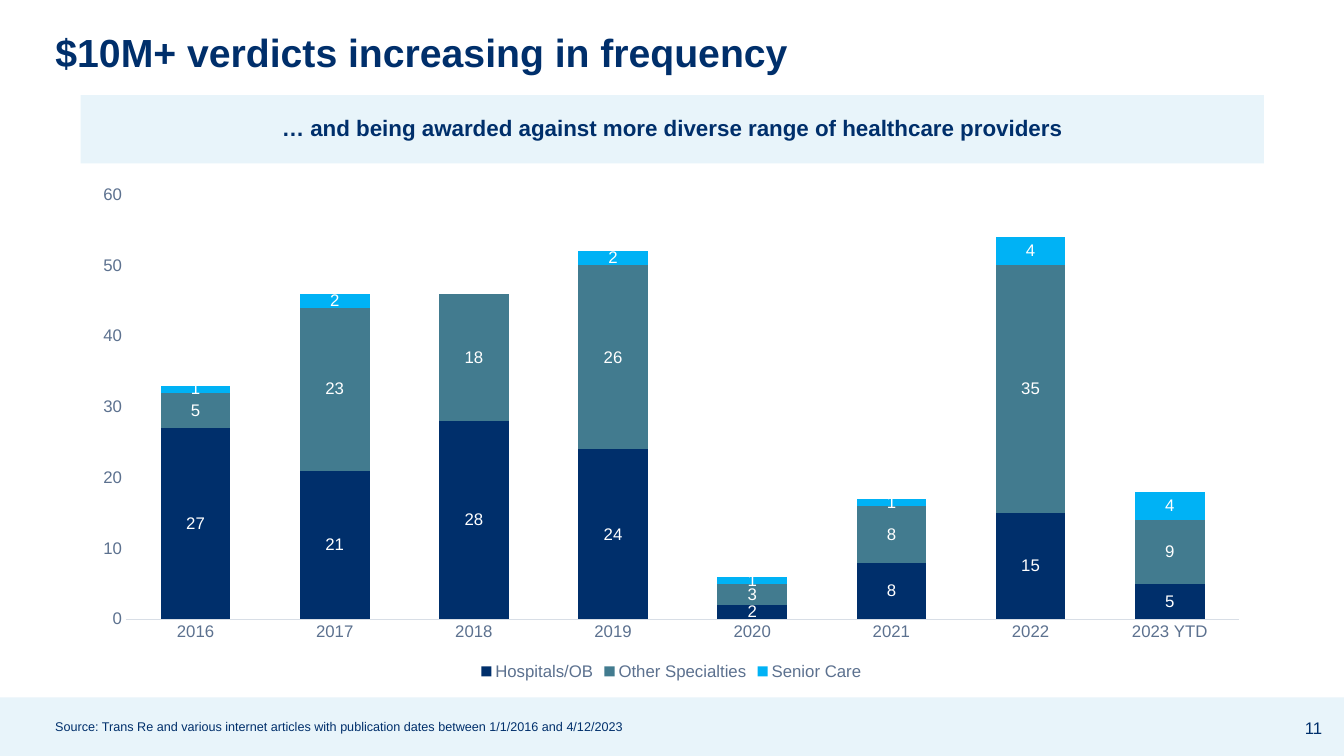
from pptx import Presentation
from pptx.chart.data import CategoryChartData
from pptx.dml.color import RGBColor
from pptx.enum.chart import XL_CHART_TYPE, XL_LABEL_POSITION, XL_LEGEND_POSITION, XL_TICK_MARK
from pptx.enum.shapes import MSO_SHAPE
from pptx.enum.text import MSO_ANCHOR, MSO_AUTO_SIZE, PP_ALIGN
from pptx.util import Pt

RECTANGLE = MSO_SHAPE.RECTANGLE
STACKED = XL_CHART_TYPE.COLUMN_STACKED
CENTER_LABEL = XL_LABEL_POSITION.CENTER
LEGEND_BOTTOM = XL_LEGEND_POSITION.BOTTOM
NO_TICK = XL_TICK_MARK.NONE
MIDDLE = MSO_ANCHOR.MIDDLE
NO_FIT = MSO_AUTO_SIZE.NONE
LEFT, CENTER = PP_ALIGN.LEFT, PP_ALIGN.CENTER

COLORS = {
    "navy": "002F6B",
    "teal": "427B8F",
    "sky": "00B2F5",
    "pale": "E8F4FA",
    "slate": "5C718F",
    "axis": "D8DEE6",
    "white": "FFFFFF",
}
YEARS = ["2016", "2017", "2018", "2019", "2020", "2021", "2022", "2023 YTD"]
VERDICTS = [
    ("Hospitals/OB", "navy", [27, 21, 28, 24, 2, 8, 15, 5]),
    ("Other Specialties", "teal", [5, 23, 18, 26, 3, 8, 35, 9]),
    ("Senior Care", "sky", [1, 2, None, 2, 1, 1, 4, 4]),
]


def color(name):
    return RGBColor.from_string(COLORS[name])


def style_font(font, size, color_name, bold=False):
    for key, value in {"name": "Arial", "size": Pt(size), "bold": bold}.items():
        setattr(font, key, value)
    font.color.rgb = color(color_name)


def write_text(shape, text, size, bold=False, align=LEFT, spacing=0.9):
    frame = shape.text_frame
    settings = {"word_wrap": True, "auto_size": NO_FIT, "vertical_anchor": MIDDLE}
    for key, value in settings.items():
        setattr(frame, key, value)
    para = frame.paragraphs[0]
    para.alignment = align
    para.line_spacing = spacing
    span = para.add_run()
    span.text = text
    style_font(span.font, size, "navy", bold)


def add_band(page, left, top, width, height):
    band = page.shapes.add_shape(RECTANGLE, Pt(left), Pt(top), Pt(width), Pt(height))
    band.shadow.inherit = False
    band.fill.solid()
    band.fill.fore_color.rgb = color("pale")
    band.line.fill.background()
    return band


def add_text(page, left, top, width, height, text, size, **options):
    box = page.shapes.add_textbox(Pt(left), Pt(top), Pt(width), Pt(height))
    write_text(box, text, size, **options)


def place_title(page, left, top, width, height, text):
    title = page.shapes.title
    places = {"left": left, "top": top, "width": width, "height": height}
    for key, value in places.items():
        setattr(title, key, Pt(value))
    write_text(title, text, 28, bold=True)


def style_axis(axis):
    settings = {
        "has_major_gridlines": False,
        "major_tick_mark": NO_TICK,
        "minor_tick_mark": NO_TICK,
    }
    for key, value in settings.items():
        setattr(axis, key, value)
    style_font(axis.tick_labels.font, 12, "slate")


def add_verdict_chart(page, left, top, width, height):
    data = CategoryChartData()
    data.categories = YEARS
    for name, _, values in VERDICTS:
        data.add_series(name, values)
    chart = page.shapes.add_chart(
        STACKED, Pt(left), Pt(top), Pt(width), Pt(height), data
    ).chart
    chart.has_title = False
    style_font(chart.font, 12, "slate")

    chart.has_legend = True
    chart.legend.position = LEGEND_BOTTOM
    chart.legend.include_in_layout = False
    style_font(chart.legend.font, 12, "slate")

    style_axis(chart.category_axis)
    chart.category_axis.format.line.color.rgb = color("axis")
    chart.category_axis.format.line.width = Pt(0.75)
    scale = chart.value_axis
    style_axis(scale)
    scale.format.line.fill.background()
    for key, value in {"minimum_scale": 0, "maximum_scale": 60, "major_unit": 10}.items():
        setattr(scale, key, value)

    plot = chart.plots[0]
    for key, value in {"gap_width": 100, "overlap": 100, "vary_by_categories": False}.items():
        setattr(plot, key, value)
    for series, (_, color_name, _) in zip(plot.series, VERDICTS):
        series.format.fill.solid()
        series.format.fill.fore_color.rgb = color(color_name)
        labels = series.data_labels
        labels.show_value = True
        labels.position = CENTER_LABEL
        style_font(labels.font, 12, "white")


def main():
    deck = Presentation()
    deck.slide_width, deck.slide_height = Pt(960), Pt(540)
    page = deck.slides.add_slide(deck.slide_layouts[5])

    add_band(page, 0, 498.2, 960, 41.8)
    banner = add_band(page, 57.6, 67.9, 845.3, 48.8)
    write_text(
        banner,
        "… and being awarded against more diverse range of healthcare providers",
        16, bold=True, align=CENTER,
    )
    place_title(page, 32.4, 10.8, 870.5, 56.2, "$10M+ verdicts increasing in frequency")
    add_verdict_chart(page, 56.9, 125.3, 845.3, 363.6)
    add_text(
        page, 32.4, 510.5, 871.2, 18,
        "Source: Trans Re and various internet articles with publication dates "
        "between 1/1/2016 and 4/12/2023",
        9,
    )
    add_text(page, 916.5, 505.4, 43.5, 28.8, "11", 12, align=CENTER, spacing=1.0)
    deck.save("out.pptx")


if __name__ == "__main__":
    main()
